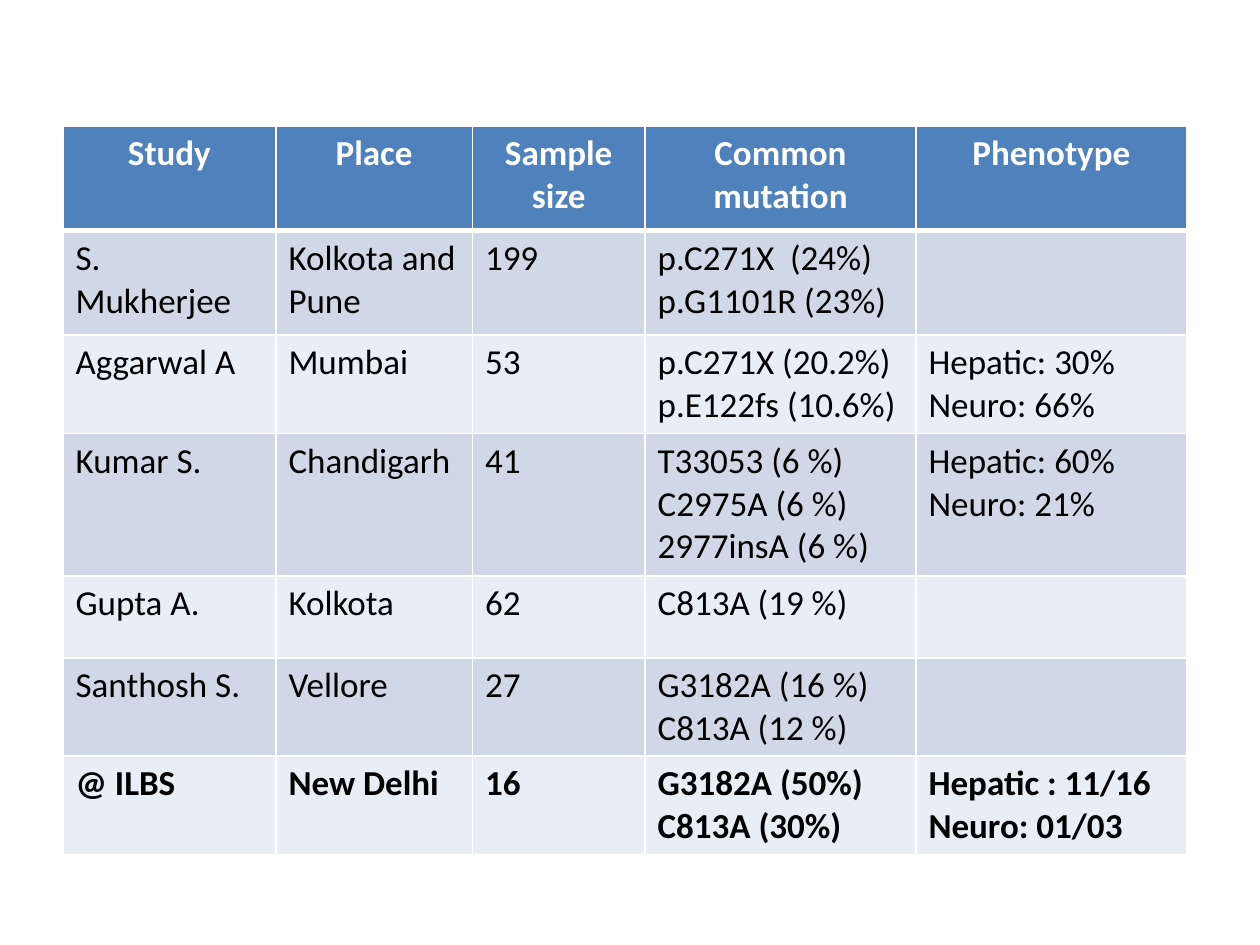
from lxml import etree
from pptx import Presentation
from pptx.dml.color import RGBColor
from pptx.enum.text import PP_ALIGN
from pptx.oxml.ns import qn
from pptx.util import Inches, Pt

CENTER, LEFT = PP_ALIGN.CENTER, PP_ALIGN.LEFT
FONT, TEXT_SIZE = "Calibri", 20
WHITE, BLACK, HEADER_FILL = "FFFFFF", "000000", "4F81BD"
BANDS = ("D0D8E8", "E9EDF4")

COLUMN_WIDTHS = (1.69, 1.56, 1.37, 2.15, 2.15)
ROW_HEIGHTS = (0.83, 0.83, 0.78, 1.13, 0.65, 0.78, 0.78)
STUDIES = (
    ("Study", "Place", "Sample size", "Common mutation", "Phenotype"),
    ("S. Mukherjee", "Kolkota and Pune", "199", "p.C271X  (24%)\np.G1101R (23%)", ""),
    ("Aggarwal A", "Mumbai", "53", "p.C271X (20.2%)\np.E122fs (10.6%)",
     "Hepatic: 30%\nNeuro: 66%"),
    ("Kumar S.", "Chandigarh", "41", "T33053 (6 %)\nC2975A (6 %)\n2977insA (6 %)",
     "Hepatic: 60%\nNeuro: 21%"),
    ("Gupta A.", "Kolkota", "62", "C813A (19 %)", ""),
    ("Santhosh S.", "Vellore", "27", "G3182A (16 %)\nC813A (12 %)", ""),
    ("@ ILBS", "New Delhi", "16", "G3182A (50%)\nC813A (30%)",
     "Hepatic : 11/16\nNeuro: 01/03"),
)


def color(hex_value):
    return RGBColor.from_string(hex_value)


def set_borders(cell, widths):
    """Draw white borders; widths are points by side."""
    properties = cell._tc.get_or_add_tcPr()
    for side, width in widths.items():
        line = etree.SubElement(properties, qn(f"a:ln{side}"), w=str(Pt(width)))
        fill = etree.SubElement(line, qn("a:solidFill"))
        etree.SubElement(fill, qn("a:srgbClr"), val=WHITE)


def format_cell(cell, text, fill, text_color, bold, align, widths):
    set_borders(cell, widths)
    cell.fill.solid()
    cell.fill.fore_color.rgb = color(fill)
    cell.text_frame.text = text
    for para in cell.text_frame.paragraphs:
        para.alignment = align
        for span in para.runs:
            span.font.name = FONT
            span.font.size = Pt(TEXT_SIZE)
            span.font.bold = bold
            span.font.color.rgb = color(text_color)


def add_study_table(page, left, top):
    frame = page.shapes.add_table(
        len(STUDIES), len(COLUMN_WIDTHS), left, top,
        Inches(sum(COLUMN_WIDTHS)), Inches(sum(ROW_HEIGHTS)))
    table = frame.table
    for column, width in zip(table.columns, COLUMN_WIDTHS):
        column.width = Inches(width)
    for row, height in zip(table.rows, ROW_HEIGHTS):
        row.height = Inches(height)

    # Header, banded studies, and the bold closing row
    last = len(STUDIES) - 1
    for row_index, study in enumerate(STUDIES):
        header = row_index == 0
        fill = HEADER_FILL if header else BANDS[(row_index - 1) % 2]
        widths = {"L": 1, "R": 1, "T": 3 if row_index == 1 else 1,
                  "B": 3 if header else 1}
        for column_index, text in enumerate(study):
            format_cell(table.cell(row_index, column_index), text, fill,
                        WHITE if header else BLACK, row_index in (0, last),
                        CENTER if header else LEFT, widths)


def main():
    deck = Presentation()
    deck.slide_width, deck.slide_height = Inches(10), Inches(7.5)
    page = deck.slides.add_slide(deck.slide_layouts[6])
    add_study_table(page, Inches(0.5), Inches(1))
    deck.save("out.pptx")


if __name__ == "__main__":
    main()
